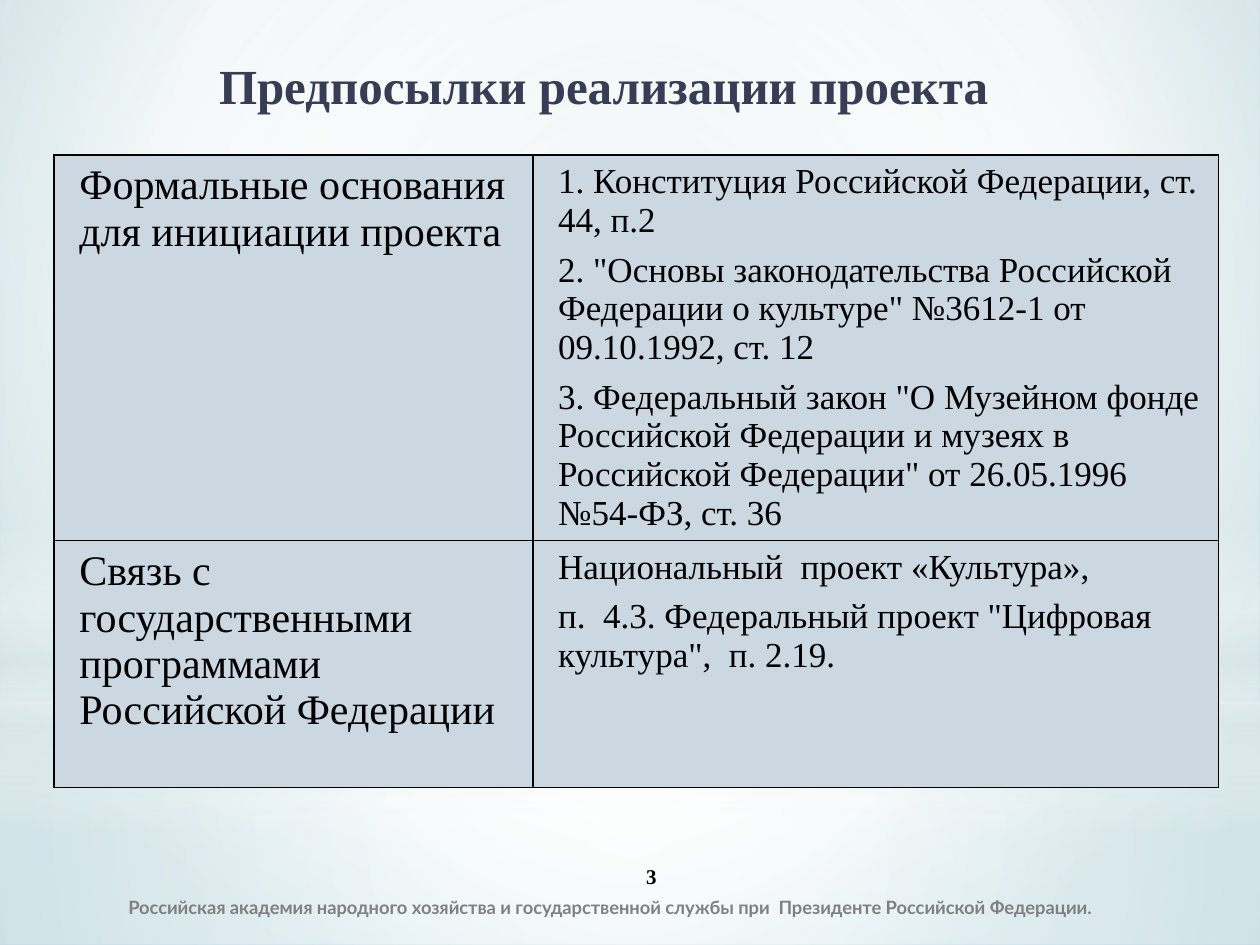
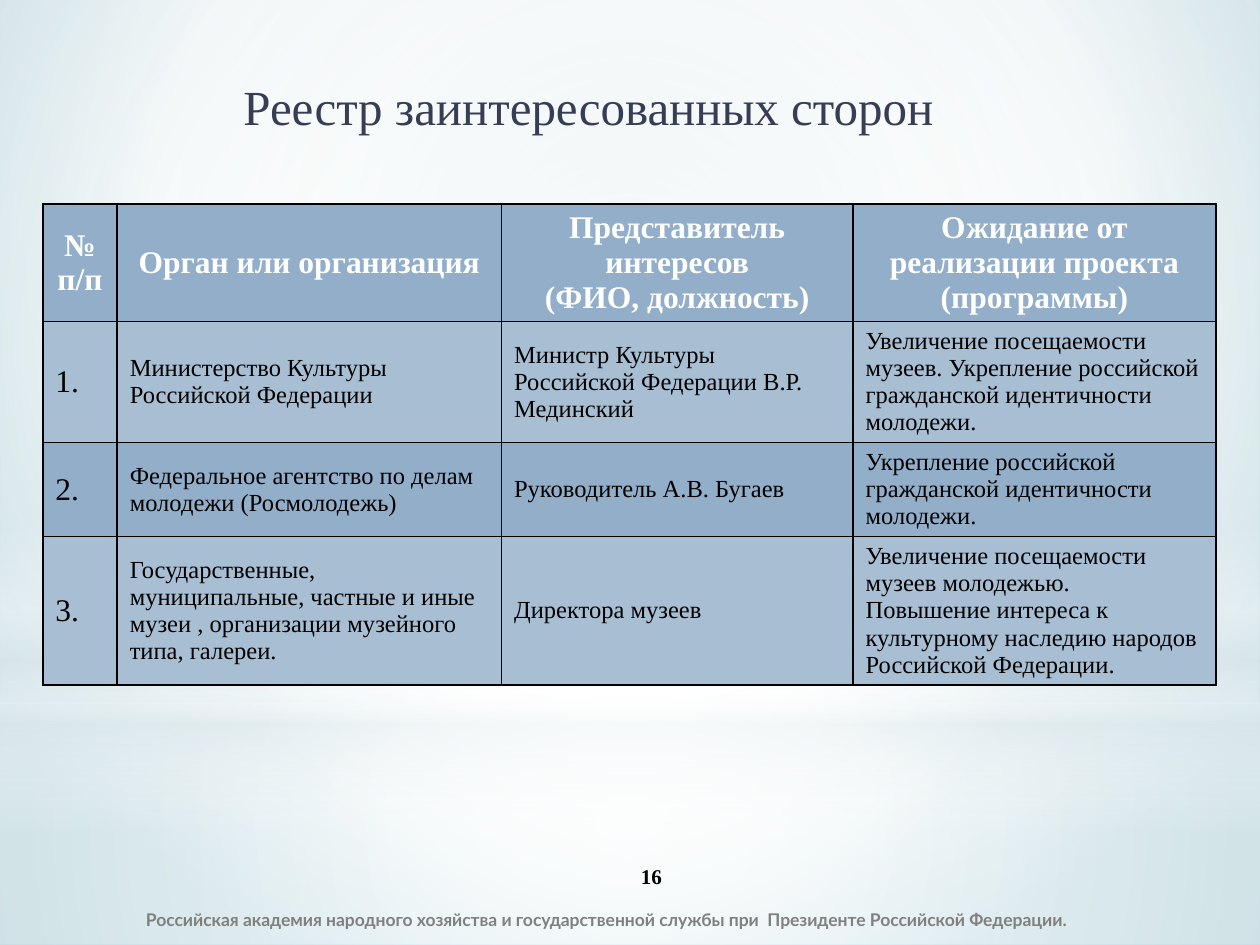
from pptx import Presentation
from pptx.dml.color import RGBColor
from pptx.enum.shapes import MSO_SHAPE
from pptx.enum.text import MSO_ANCHOR, PP_ALIGN
from pptx.oxml import parse_xml
from pptx.oxml.ns import nsdecls
from pptx.util import Inches, Pt

# Shared look
BLACK = RGBColor(0x00, 0x00, 0x00)
WHITE = RGBColor(0xFF, 0xFF, 0xFF)
GREY = RGBColor(0x80, 0x80, 0x80)
NAVY = RGBColor(0x37, 0x3D, 0x54)
PALE_BLUE = RGBColor(0xCB, 0xD7, 0xE1)
LIGHT_BLUE = RGBColor(0xA8, 0xBE, 0xD2)
MID_BLUE = RGBColor(0x92, 0xAE, 0xC8)
MIST = RGBColor(0xDD, 0xE9, 0xEC)
SKY = RGBColor(0xD0, 0xE2, 0xE6)
AQUA = RGBColor(0x9B, 0xC8, 0xD4)

SERIF = "Times New Roman"
TITLE_FONT = {"name": SERIF, "size": Pt(28)}
NUMBER_FONT = {"name": SERIF, "size": Pt(12), "bold": True}
HEADER_FONT = {"name": SERIF, "size": Pt(18), "bold": True}
FOOTER = ("Российская академия народного хозяйства и государственной службы "
          "при  Президенте Российской Федерации.")
NUMBER_BOX = (4.17, 6.75, 2, 0.4)

# Backdrop: stops are (position %, colour, opacity %)
CENTRE = (50, 50, 50, 50)
BACKGROUND = ([(0, SKY, 100), (60, WHITE, 100), (100, AQUA, 100)], (20, 10, 20, 60))
BACKDROP = [
    (MSO_SHAPE.RECTANGLE, (0, 5.58, 10, 1.92),
     [(0, WHITE, 91), (37, WHITE, 76), (100, MIST, 79)], CENTRE),
    (MSO_SHAPE.RECTANGLE, (0, 0, 10, 5.58),
     [(0, WHITE, 89), (48, WHITE, 62), (100, MIST, 79)], CENTRE),
    (MSO_SHAPE.RECTANGLE, (0, 4.12, 10, 2.5),
     [(0, WHITE, 0), (29, WHITE, 30), (45, MIST, 40),
      (55, WHITE, 26), (65, MIST, 60), (100, WHITE, 0)], None),
    (MSO_SHAPE.OVAL, (0, 1.75, 10, 5.58),
     [(0, WHITE, 100), (56, WHITE, 0)], CENTRE),
]

# Slide contents
PREMISES = {
    "title": "Предпосылки реализации проекта",
    "title_box": (0.98, 0.42, 7.62, 0.54), "title_bold": True,
    "number": "3", "footer_box": (0.92, 7, 9, 0.4), "footer_size": 10.5,
    "table_at": (0.43, 1.23), "columns": (3.8, 5.44), "rows": (3.05, 1.96),
    "header": False, "fills": (PALE_BLUE,), "sizes": (24, 20),
    "cell": {"margin_left": Inches(0.2), "margin_right": Inches(0.11),
             "margin_top": Inches(0.06), "margin_bottom": Inches(0.06),
             "vertical_anchor": MSO_ANCHOR.TOP},
    "space_before": Pt(6),
    "table": [
        ("Формальные основания для инициации проекта",
         "1. Конституция Российской Федерации, ст. 44, п.2\n"
         '2. "Основы законодательства Российской Федерации о культуре" '
         "№3612-1 от 09.10.1992, ст. 12\n"
         '3. Федеральный закон "О Музейном фонде Российской Федерации и музеях '
         'в Российской Федерации" от 26.05.1996 №54-ФЗ, ст. 36'),
        ("Связь с государственными программами Российской Федерации",
         "Национальный  проект «Культура»,\n"
         'п.  4.3. Федеральный проект "Цифровая культура",  п. 2.19.'),
    ],
}
STAKEHOLDERS = {
    "title": "Реестр заинтересованных сторон",
    "title_box": (0.96, 0.12, 7.42, 1.01), "title_bold": False,
    "number": "16", "footer_box": (1.06, 7.1, 8.9, 0.4), "footer_size": 10,
    "table_at": (0.34, 1.62), "columns": (0.59, 3.05, 2.79, 2.88),
    "rows": (0.93, 0.96, 0.74, 1.18),
    "header": True, "fills": (MID_BLUE, LIGHT_BLUE), "sizes": (18, 14, 14, 14),
    "cell": {"vertical_anchor": MSO_ANCHOR.MIDDLE},
    "space_before": Pt(0),
    "table": [
        ("№\nп/п", "Орган или организация",
         "Представитель интересов\v(ФИО, должность)",
         "Ожидание от реализации проекта (программы)"),
        ("1.", "Министерство Культуры Российской Федерации",
         "Министр Культуры Российской Федерации В.Р. Мединский",
         "Увеличение посещаемости музеев. Укрепление российской гражданской "
         "идентичности молодежи."),
        ("2.", "Федеральное агентство по делам молодежи (Росмолодежь)",
         "Руководитель А.В. Бугаев",
         "Укрепление российской гражданской идентичности молодежи."),
        ("3.", "Государственные, муниципальные, частные и иные музеи , "
         "организации музейного типа, галереи.",
         "Директора музеев",
         "Увеличение посещаемости музеев молодежью.\n"
         "Повышение интереса к культурному наследию народов Российской Федерации."),
    ],
}


def apply(target, values):
    for attribute, value in values.items():
        setattr(target, attribute, value)


def place(shape, box):
    sides = ("left", "top", "width", "height")
    apply(shape, dict(zip(sides, map(Inches, box))))


def write(frame, text, font, color, align=PP_ALIGN.LEFT, **paragraph_format):
    frame.text = text
    for paragraph in frame.paragraphs:
        apply(paragraph, {"alignment": align, **paragraph_format})
        for run in paragraph.runs:
            apply(run.font, font)
            run.font.color.rgb = color
    frame.paragraphs[0].space_before = Pt(0)


def gradient(stops, focus):
    """Circular gradient around focus, or top to bottom when there is none."""
    colours = "".join(
        f'<a:gs pos="{position * 1000}"><a:srgbClr val="{colour}">'
        f'<a:alpha val="{opacity * 1000}"/></a:srgbClr></a:gs>'
        for position, colour, opacity in stops)
    if focus:
        edges = " ".join(f'{side}="{share * 1000}"' for side, share in zip("ltrb", focus))
        course = f'<a:path path="circle"><a:fillToRect {edges}/></a:path>'
    else:
        course = '<a:lin ang="5400000" scaled="0"/>'
    return parse_xml(f'<a:gradFill {nsdecls("a")} rotWithShape="1">'
                     f'<a:gsLst>{colours}</a:gsLst>{course}</a:gradFill>')


def swap_fill(properties, fill_tag, new_fill):
    old_fill = properties.xpath(f"./a:{fill_tag}")[0]
    properties.replace(old_fill, new_fill)


def build_backdrop(master, slide):
    """Shapes are drawn on a slide, then moved behind the master's placeholders."""
    master.background.fill.solid()
    swap_fill(master.element.xpath(".//p:bgPr")[0], "solidFill", gradient(*BACKGROUND))
    for order, (kind, box, stops, focus) in enumerate(BACKDROP):
        layer = slide.shapes.add_shape(kind, *map(Inches, box))
        layer.shadow.inherit = False
        layer.line.fill.background()
        layer.fill.solid()
        swap_fill(layer.element.spPr, "solidFill", gradient(stops, focus))
        master.shapes.element.insert(2 + order, layer.element)


def add_borders(cell):
    for order, side in enumerate("LRTB"):
        cell._tc.get_or_add_tcPr().insert(order, parse_xml(
            f'<a:ln{side} {nsdecls("a")} w="12700"><a:solidFill>'
            f'<a:srgbClr val="{BLACK}"/></a:solidFill></a:ln{side}>'))


def add_grid(slide, content):
    columns, rows = content["columns"], content["rows"]
    box = (*content["table_at"], sum(columns), sum(rows))
    grid = slide.shapes.add_table(len(rows), len(columns), *map(Inches, box)).table
    apply(grid, {"first_row": content["header"], "horz_banding": False})
    for column, width in zip(grid.columns, columns):
        column.width = Inches(width)
    for r, (row, height) in enumerate(zip(grid.rows, rows)):
        row.height = Inches(height)
        for c, cell in enumerate(row.cells):
            apply(cell, content["cell"])
            cell.fill.solid()
            cell.fill.fore_color.rgb = content["fills"][r % len(content["fills"])]
            add_borders(cell)
            if content["header"] and r == 0:
                look = (HEADER_FONT, WHITE, PP_ALIGN.CENTER)
            else:
                body_font = {"name": SERIF, "size": Pt(content["sizes"][c]), "bold": False}
                look = (body_font, BLACK)
            write(cell.text_frame, content["table"][r][c], *look,
                  space_before=content["space_before"])


def add_label(slide, box, *text_and_look):
    frame = slide.shapes.add_textbox(*map(Inches, box)).text_frame
    apply(frame, {"word_wrap": True, "vertical_anchor": MSO_ANCHOR.MIDDLE})
    write(frame, *text_and_look)


def build_slide(slide, content):
    # Title
    title = slide.shapes.title
    place(title, content["title_box"])
    title.text_frame.vertical_anchor = MSO_ANCHOR.BOTTOM
    write(title.text_frame, content["title"], {**TITLE_FONT, "bold": content["title_bold"]},
          NAVY, PP_ALIGN.CENTER, line_spacing=0.9)
    # Table
    add_grid(slide, content)
    # Footer and slide number
    footer_font = {"name": "Lato", "size": Pt(content["footer_size"]), "bold": True}
    add_label(slide, content["footer_box"], FOOTER, footer_font, GREY)
    add_label(slide, NUMBER_BOX, content["number"], NUMBER_FONT, BLACK, PP_ALIGN.CENTER)


def main():
    deck = Presentation()
    apply(deck, {"slide_width": Inches(10), "slide_height": Inches(7.5)})
    title_only = deck.slide_layouts[5]
    slides = [deck.slides.add_slide(title_only) for _ in range(2)]
    build_backdrop(deck.slide_master, slides[0])
    for slide, content in zip(slides, (PREMISES, STAKEHOLDERS)):
        build_slide(slide, content)
    deck.save("out.pptx")


if __name__ == "__main__":
    main()
